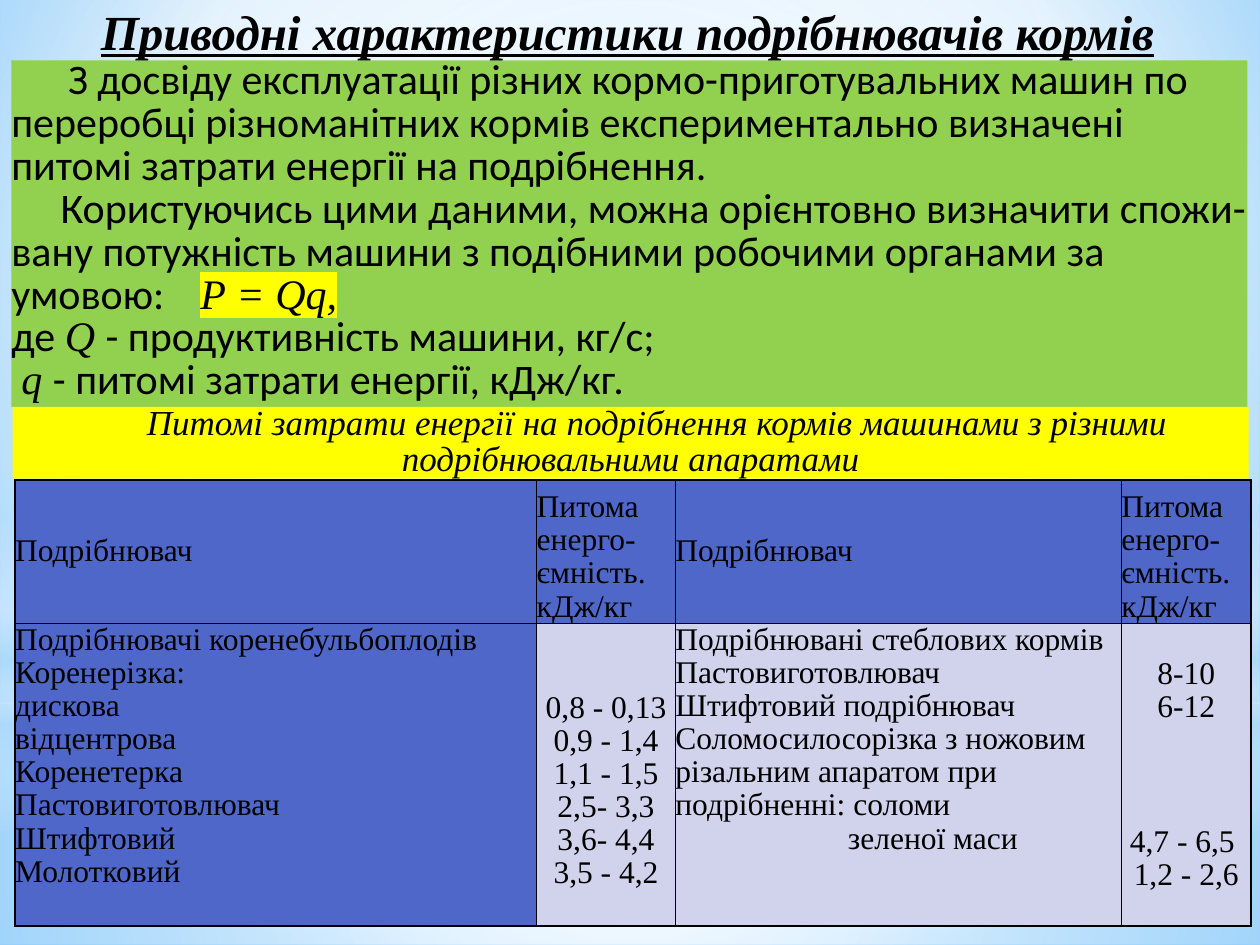
import pptx
import pptx.util
import pptx.dml.color
import pptx.enum.shapes
import pptx.enum.text
import pptx.oxml
import pptx.oxml.ns

Inches = pptx.util.Inches
Pt = pptx.util.Pt
qn = pptx.oxml.ns.qn
ALIGN = pptx.enum.text.PP_ALIGN
ANCHOR = pptx.enum.text.MSO_ANCHOR
FIT = pptx.enum.text.MSO_AUTO_SIZE
SHAPE = pptx.enum.shapes.MSO_SHAPE

COLORS = {
    "text": "000000", "green": "92D050", "yellow": "FFFF00",
    "header": "4E67C8", "value": "D0D3EB", "white": "FFFFFF",
    "mist": "B4DCFA", "sky": "9ED5FF", "edge": "5BB9FF",
}
NS = 'xmlns:a="http://schemas.openxmlformats.org/drawingml/2006/main"'
SERIF = "Times New Roman"
BODY = {"name": "Calibri", "size": Pt(24)}
FORMULA = {"name": SERIF, "size": Pt(24), "italic": True}
CAPTION = {"name": SERIF, "size": Pt(20), "italic": True}
TITLE = {"name": SERIF, "size": Pt(28), "bold": True, "italic": True, "underline": True}
CELL = {"name": SERIF, "size": Pt(18)}
LINE = 0.27


def rgb(key):
    return pptx.dml.color.RGBColor.from_string(COLORS[key])


def set_attrs(obj, values):
    for name, value in values.items():
        setattr(obj, name, value)


def set_gradient(element, stops, center=None):
    gs = "".join(
        f'<a:gs pos="{pos * 1000}"><a:srgbClr val="{COLORS[key]}">'
        f'<a:alpha val="{alpha * 1000}"/></a:srgbClr></a:gs>'
        for pos, key, alpha in stops)
    if center:
        sides = " ".join(f'{side}="{v * 1000}"' for side, v in zip("ltrb", center))
        way = f'<a:path path="circle"><a:fillToRect {sides}/></a:path>'
    else:
        way = '<a:lin ang="5400000" scaled="0"/>'
    fill = pptx.oxml.parse_xml(
        f'<a:gradFill {NS} rotWithShape="1"><a:gsLst>{gs}</a:gsLst>{way}</a:gradFill>')
    old = next(element.iter(qn("a:solidFill")))
    old.getparent().replace(old, fill)


def add_panel(s, box, color, shape=SHAPE.RECTANGLE):
    sp = s.shapes.add_shape(shape, *map(Inches, box))
    sp.shadow.inherit = False
    sp.fill.solid()
    sp.fill.fore_color.rgb = rgb(color)
    sp.line.fill.background()
    return sp


def set_frame(tf, wrap=True):
    set_attrs(tf, {"margin_left": 0, "margin_top": 0, "margin_right": 0,
                   "margin_bottom": 0, "word_wrap": wrap,
                   "vertical_anchor": ANCHOR.TOP, "auto_size": FIT.SHAPE_TO_FIT_TEXT})


def add_run(p, text, font, highlight=None):
    r = p.add_run()
    r.text = text
    r.font.color.rgb = rgb("text")
    set_attrs(r.font, font)
    if highlight:
        mark = pptx.oxml.parse_xml(
            f'<a:highlight {NS}><a:srgbClr val="{COLORS[highlight]}"/></a:highlight>')
        r._r.get_or_add_rPr().find(qn("a:solidFill")).addnext(mark)


def add_paragraph(tf, index, runs, spacing, align=ALIGN.LEFT, indent=0, tab=None, before=0):
    p = tf.paragraphs[0] if index == 0 else tf.add_paragraph()
    set_attrs(p, {"alignment": align, "line_spacing": spacing, "space_before": Inches(before)})
    pPr = p._p.get_or_add_pPr()
    pPr.set("marL", "0")
    pPr.set("indent", str(Inches(indent)))
    if tab:
        pPr.append(pptx.oxml.parse_xml(
            f'<a:tabLst {NS}><a:tab pos="{Inches(tab)}" algn="l"/></a:tabLst>'))
    for run in runs:
        add_run(p, *run)


def add_background(s, width, height):
    s.background.fill.solid()
    s.background.fill.fore_color.rgb = rgb("sky")
    set_gradient(s.element, [(0, "sky", 100), (60, "white", 100), (100, "edge", 100)],
                 (20, 10, 20, 60))
    middle = (50, 50, 50, 50)
    horizon = 5.58
    layers = [
        ((0, horizon, width, height - horizon), SHAPE.RECTANGLE, middle,
         [(0, "white", 91), (37, "white", 76), (100, "mist", 79)]),
        ((0, 0, width, horizon), SHAPE.RECTANGLE, middle,
         [(0, "white", 89), (48, "white", 62), (100, "mist", 79)]),
        ((0, 4.12, width, 2.5), SHAPE.RECTANGLE, None,
         [(0, "white", 0), (29, "white", 30), (45, "mist", 40),
          (55, "white", 26), (65, "mist", 60), (100, "white", 0)]),
        ((0, 1.75, width, horizon), SHAPE.OVAL, middle,
         [(0, "white", 100), (56, "white", 0)]),
    ]
    for box, shape, center, stops in layers:
        sp = add_panel(s, box, "white", shape)
        set_gradient(sp._element, stops, center)


def add_title(s, box):
    title = s.shapes.title
    set_attrs(title, dict(zip(("left", "top", "width", "height"), map(Inches, box))))
    set_frame(title.text_frame, wrap=False)
    add_paragraph(title.text_frame, 0,
                  [("Приводні характеристики подрібнювачів кормів", TITLE)], 1.0)
    s.shapes.element.append(title.element)


def add_explanation(s, box):
    tf = add_panel(s, box, "green").text_frame
    set_frame(tf)
    paragraphs = [
        ([("З досвіду експлуатації різних кормо-приготувальних машин по переробці "
           "різноманітних кормів експериментально визначені питомі затрати енергії "
           "на подрібнення.", BODY)], {"indent": 0.45}),
        ([("Користуючись цими даними, можна орієнтовно визначити спожи-вану потужність "
           "машини з подібними робочими органами за умовою:\t", BODY),
          ("Р = Qq,", FORMULA, "yellow")], {"indent": 0.39, "tab": 4.3}),
        ([("де ", BODY), ("Q ", FORMULA), ("- продуктивність машини, кг/с;", BODY)], {}),
        ([("q ", FORMULA), ("- питомі затрати енергії, кДж/кг.", BODY)], {"indent": 0.08}),
    ]
    for i, (runs, layout) in enumerate(paragraphs):
        add_paragraph(tf, i, runs, 0.85, **layout)


def add_caption(s, box):
    tf = add_panel(s, box, "yellow").text_frame
    set_frame(tf)
    add_paragraph(tf, 0, [("Питомі затрати енергії на подрібнення кормів машинами з різними "
                           "подрібнювальними апаратами", CAPTION)],
                  0.85, ALIGN.CENTER, indent=0.42)


def fill_cell(cell, lines, color, align=ALIGN.LEFT, anchor=ANCHOR.TOP, top=0, layouts={}):
    set_attrs(cell, {"margin_left": 0, "margin_right": 0, "margin_bottom": 0,
                     "margin_top": Inches(top), "vertical_anchor": anchor})
    tcPr = cell._tc.get_or_add_tcPr()
    for side in "LRTB":
        tcPr.append(pptx.oxml.parse_xml(
            f'<a:ln{side} {NS} w="12700"><a:solidFill><a:srgbClr val="{COLORS["text"]}"/>'
            f'</a:solidFill></a:ln{side}>'))
    cell.fill.solid()
    cell.fill.fore_color.rgb = rgb(color)
    for i, line in enumerate(lines):
        add_paragraph(cell.text_frame, i, [(line, CELL)], 0.95, align, **layouts.get(i, {}))


def add_energy_table(s, box):
    table = s.shapes.add_table(2, 4, *map(Inches, box)).table
    set_attrs(table, {"first_row": False, "horz_banding": False})
    for column, width in zip(table.columns, (4.14, 1.1, 3.54, 1.03)):
        column.width = Inches(width)
    for row, height in zip(table.rows, (1.14, 2.4)):
        row.height = Inches(height)
    headers = [(["Подрібнювач"], ANCHOR.MIDDLE),
               (["Питома", "енерго-", "ємність.", "кДж/кг"], ANCHOR.BOTTOM)]
    for col in range(4):
        lines, anchor = headers[col % 2]
        fill_cell(table.cell(0, col), lines, "header", ALIGN.JUSTIFY, anchor)
    fill_cell(table.cell(1, 0),
              ["Подрібнювачі коренебульбоплодів", "Коренерізка:", "дискова", "відцентрова",
               "Коренетерка", "Пастовиготовлювач", "Штифтовий", "Молотковий"], "header")
    fill_cell(table.cell(1, 1),
              ["0,8 - 0,13 0,9 - 1,4", "1,1 - 1,5", "2,5- 3,3", "3,6- 4,4", "3,5 - 4,2"],
              "value", ALIGN.CENTER, top=2 * LINE)
    fill_cell(table.cell(1, 2),
              ["Подрібнювані стеблових кормів", "Пастовиготовлювач",
               "Штифтовий подрібнювач Соломосилосорізка з ножовим різальним апаратом "
               "при подрібненні: соломи", "зеленої маси"],
              "value", layouts={3: {"indent": 1.37}})
    fill_cell(table.cell(1, 3), ["8-10", "6-12", "4,7 - 6,5 ", "1,2 - 2,6"],
              "value", ALIGN.CENTER, top=LINE, layouts={2: {"before": 3 * LINE}})


def main():
    prs = pptx.Presentation()
    prs.slide_width, prs.slide_height = Inches(10), Inches(7.5)
    s = prs.slides.add_slide(prs.slide_layouts[5])
    add_background(s, 10, 7.5)
    add_explanation(s, (0.09, 0.48, 9.81, 2.75))
    add_caption(s, (0.1, 3.23, 9.81, 0.57))
    add_title(s, (0.8, 0.01, 8.45, 0.47))
    add_energy_table(s, (0.12, 3.81, 9.81, 3.54))
    prs.save("out.pptx")


if __name__ == "__main__":
    main()
